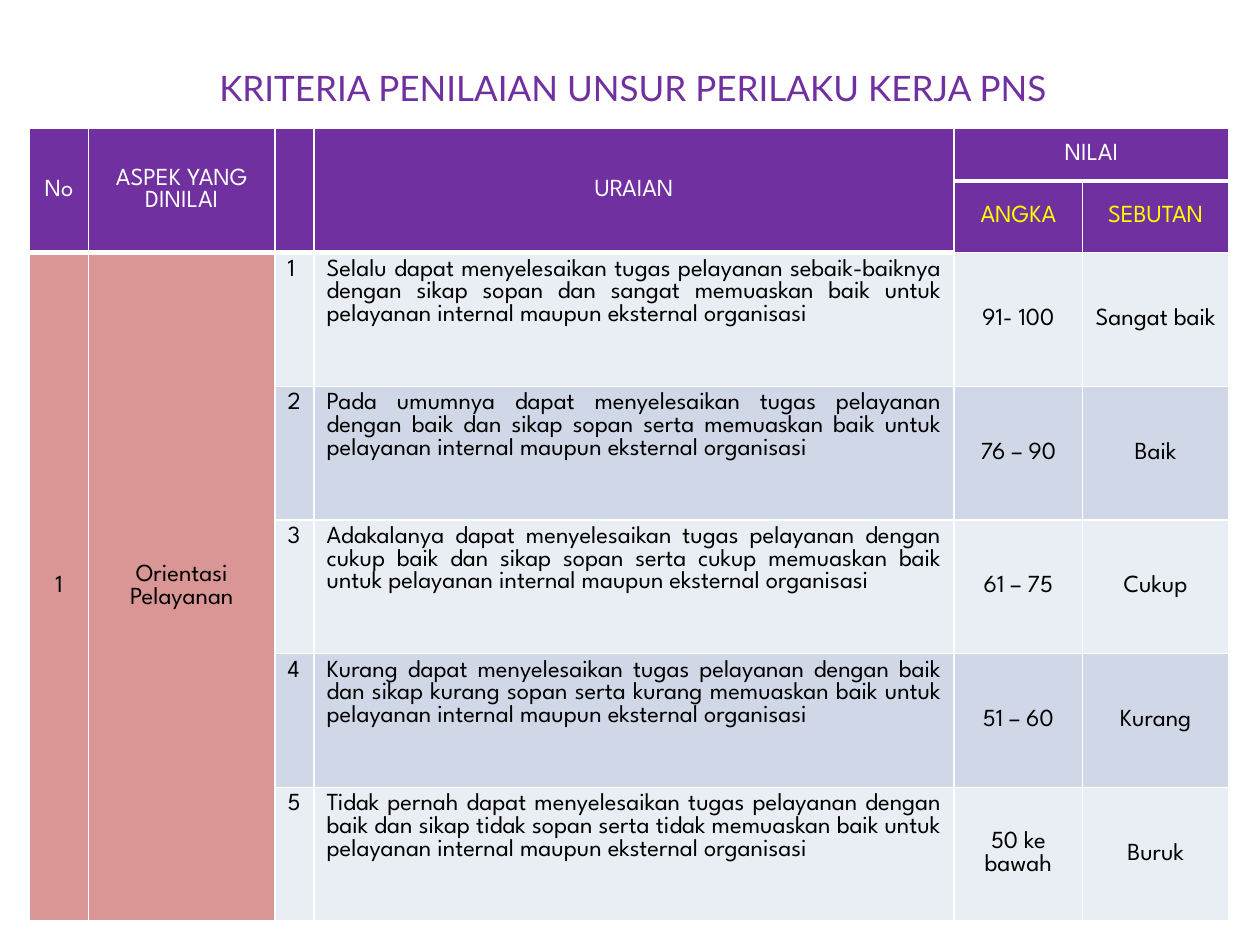
from lxml.etree import SubElement
from pptx import Presentation
from pptx.dml.color import RGBColor
from pptx.enum.text import MSO_ANCHOR as Anchor, PP_ALIGN as Align
from pptx.oxml.ns import qn
from pptx.util import Pt

COLORS = {
    "purple": "7030A0", "white": "FFFFFF", "yellow": "FFFF00", "black": "000000",
    "rose": "D99694", "light": "E9EDF4", "blue": "D0D8E8",
}
COLUMNS = [33.8, 106.6, 22.3, 365.8, 73.4, 83.5]
HEADER_HEIGHT, RATING_HEIGHT = 30, 76.4
HEADINGS = ["No", "ASPEK YANG DINILAI", "", "URAIAN", "NILAI"]
RATINGS = [
    ("Selalu dapat menyelesaikan tugas pelayanan sebaik-baiknya dengan sikap sopan "
     "dan sangat memuaskan baik untuk pelayanan internal maupun eksternal organisasi",
     "91- 100", "Sangat baik"),
    ("Pada umumnya dapat menyelesaikan tugas pelayanan dengan baik dan sikap sopan "
     "serta memuaskan baik untuk pelayanan internal maupun eksternal organisasi",
     "76 – 90", "Baik"),
    ("Adakalanya dapat menyelesaikan tugas pelayanan dengan cukup baik dan sikap sopan "
     "serta cukup memuaskan baik untuk pelayanan internal maupun eksternal organisasi",
     "61 – 75", "Cukup"),
    ("Kurang dapat menyelesaikan tugas pelayanan dengan baik dan sikap kurang sopan "
     "serta kurang memuaskan baik untuk pelayanan internal maupun eksternal organisasi",
     "51 – 60", "Kurang"),
    ("Tidak pernah dapat menyelesaikan tugas pelayanan dengan baik dan sikap tidak sopan "
     "serta tidak memuaskan baik untuk pelayanan internal maupun eksternal organisasi",
     "50 ke bawah", "Buruk"),
]


def rgb(name):
    return RGBColor.from_string(COLORS[name])


def write(frame, text, font, size, color, align):
    para = frame.paragraphs[0]
    para.alignment = align
    span = para.add_run()
    span.text = text
    span.font.name = font
    span.font.size = Pt(size)
    span.font.color.rgb = rgb(color)


def style_cell(cell, fill, bottom=1):
    properties = cell._tc.get_or_add_tcPr()
    for side, width in (("L", 1), ("R", 1), ("T", 1), ("B", bottom)):
        line = SubElement(properties, qn(f"a:ln{side}"), w=str(Pt(width)))
        SubElement(SubElement(line, qn("a:solidFill")), qn("a:srgbClr"), val=COLORS["white"])
    cell.fill.solid()
    cell.fill.fore_color.rgb = rgb(fill)


def fill_cell(cell, text, color="black", align=Align.CENTER, anchor=Anchor.MIDDLE):
    cell.vertical_anchor = anchor
    if text:
        write(cell.text_frame, text, "League Spartan", 14, color, align)


def add_title(page, left, top, width, height):
    box = page.shapes.add_textbox(Pt(left), Pt(top), Pt(width), Pt(height))
    frame = box.text_frame
    frame.word_wrap = True
    frame.vertical_anchor = Anchor.MIDDLE
    write(frame, "KRITERIA PENILAIAN UNSUR PERILAKU KERJA PNS", "Lato", 20, "purple", Align.CENTER)


def add_header(table):
    for column in range(len(COLUMNS)):
        style_cell(table.cell(0, column), "purple", bottom=3)
        style_cell(table.cell(1, column), "purple")
    for column, heading in enumerate(HEADINGS):
        end = (0, 5) if heading == "NILAI" else (1, column)
        table.cell(0, column).merge(table.cell(*end))
        fill_cell(table.cell(0, column), heading, "white")
    for column, heading in ((4, "ANGKA"), (5, "SEBUTAN")):
        fill_cell(table.cell(1, column), heading, "yellow")


def add_ratings(table):
    for number, (description, score, label) in enumerate(RATINGS, 1):
        row = number + 1
        band = "light" if number % 2 else "blue"
        for column in range(len(COLUMNS)):
            style_cell(table.cell(row, column), "rose" if column < 2 else band)
        fill_cell(table.cell(row, 2), str(number), align=Align.LEFT, anchor=Anchor.TOP)
        fill_cell(table.cell(row, 3), description, align=Align.JUSTIFY, anchor=Anchor.TOP)
        fill_cell(table.cell(row, 4), score)
        fill_cell(table.cell(row, 5), label)
    for column, text in enumerate(("1", "Orientasi Pelayanan")):
        table.cell(2, column).merge(table.cell(len(RATINGS) + 1, column))
        fill_cell(table.cell(2, column), text)


def add_criteria_table(page, left, top):
    heights = [HEADER_HEIGHT] * 2 + [RATING_HEIGHT] * len(RATINGS)
    table = page.shapes.add_table(len(heights), len(COLUMNS), Pt(left), Pt(top),
                                  Pt(sum(COLUMNS)), Pt(sum(heights))).table
    table.first_row = False
    table.horz_banding = False
    for column, width in zip(table.columns, COLUMNS):
        column.width = Pt(width)
    for row, height in zip(table.rows, heights):
        row.height = Pt(height)
    add_header(table)
    add_ratings(table)


def main():
    deck = Presentation()
    deck.slide_width, deck.slide_height = Pt(720), Pt(540)
    page = deck.slides.add_slide(deck.slide_layouts[6])
    add_title(page, 39.6, 21.6, 644.4, 56.9)
    add_criteria_table(page, 16.8, 73.5)
    deck.save("out.pptx")


if __name__ == "__main__":
    main()
